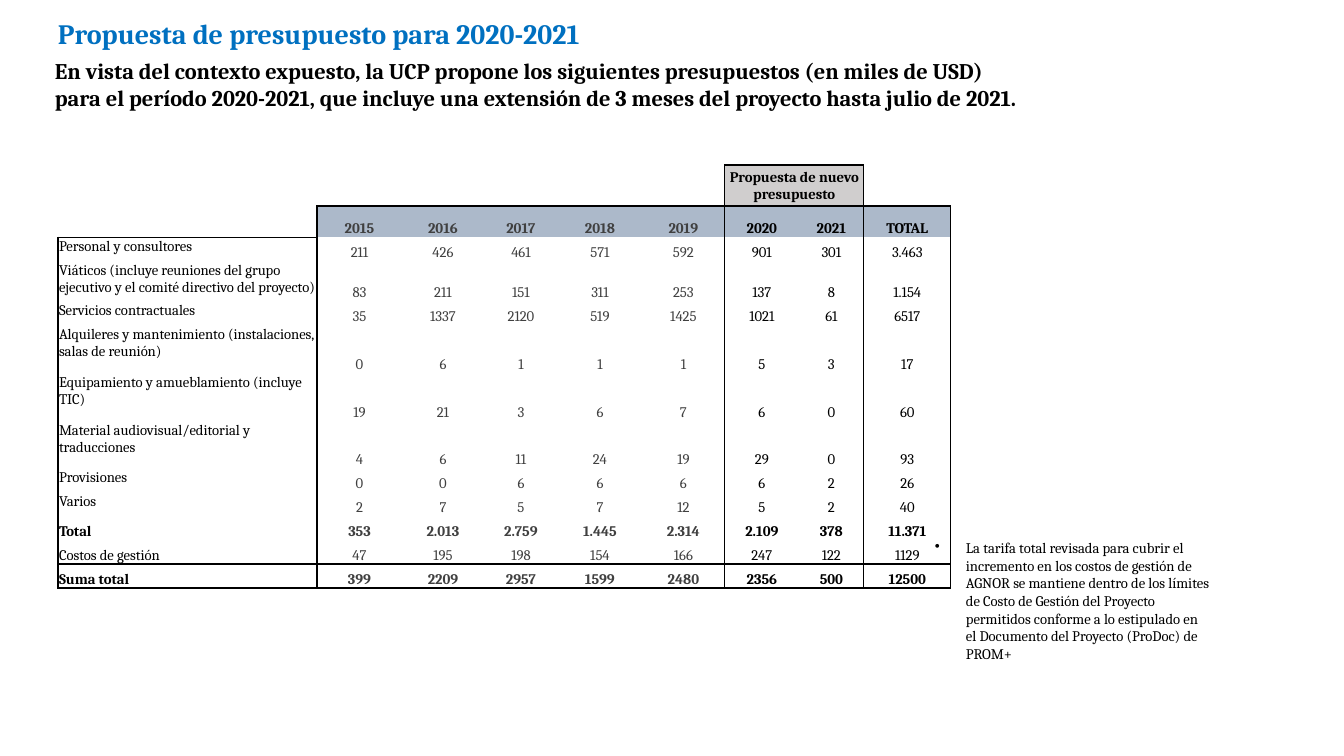
"""Build the slide with the 2020-2021 budget proposal table."""
import dataclasses

import lxml.etree
import pptx
import pptx.dml.color
import pptx.enum.text
import pptx.oxml.ns
import pptx.util

EMU_PER_PX = 914400 / 100.8
ALIGN = pptx.enum.text.PP_ALIGN
ANCHOR = pptx.enum.text.MSO_ANCHOR


@dataclasses.dataclass(frozen=True)
class Theme:
    font: str = "Cambria"
    title: str = "0070C0"
    ink: str = "000000"
    past: str = "404040"
    heading_fill: str = "ACB9CA"
    proposal_fill: str = "D0CECE"
    title_size: float = 20
    subtitle_size: float = 16
    body_size: float = 10.5
    line_width: float = 1


THEME = Theme()

COLUMN_WIDTHS = [259, 85, 82, 74, 84, 83, 74, 65, 87]
ROW_HEIGHTS = [41, 31, 24, 40, 24, 48, 48, 47, 24, 24, 24, 24, 24]
PAST_COLUMNS = range(1, 6)
PROPOSAL_COLUMNS = range(6, 8)
BOLD_ROWS = (0, 1, 10, 12)
TOP_LABEL_ROWS = range(2, 10)
BUDGET = [
    ["", "", "", "", "", "", "Propuesta de nuevo presupuesto", "", ""],
    ["", "2015", "2016", "2017", "2018", "2019", "2020", "2021", "TOTAL"],
    ["Personal y consultores", "211", "426", "461", "571", "592", "901", "301", "3.463"],
    ["Viáticos (incluye reuniones del grupo ejecutivo y el comité directivo del proyecto)",
     "83", "211", "151", "311", "253", "137", "8", "1.154"],
    ["Servicios contractuales", "35", "1337", "2120", "519", "1425", "1021", "61", "6517"],
    ["Alquileres y mantenimiento (instalaciones, salas de reunión)",
     "0", "6", "1", "1", "1", "5", "3", "17"],
    ["Equipamiento y amueblamiento (incluye TIC)", "19", "21", "3", "6", "7", "6", "0", "60"],
    ["Material audiovisual/editorial y traducciones",
     "4", "6", "11", "24", "19", "29", "0", "93"],
    ["Provisiones", "0", "0", "6", "6", "6", "6", "2", "26"],
    ["Varios", "2", "7", "5", "7", "12", "5", "2", "40"],
    ["Total", "353", "2.013", "2.759", "1.445", "2.314", "2.109", "378", "11.371"],
    ["Costos de gestión", "47", "195", "198", "154", "166", "247", "122", "1129"],
    ["Suma total", "399", "2209", "2957", "1599", "2480", "2356", "500", "12500"],
]


def px(length):
    """Turn a length in px into EMU."""
    return pptx.util.Emu(round(length * EMU_PER_PX))


def rgb(value):
    """Turn a hex string into a colour."""
    return pptx.dml.color.RGBColor.from_string(value)


def write_text(frame, *lines, size=THEME.body_size, color=THEME.ink, bold=False, align=ALIGN.LEFT):
    """Fill a text frame with one paragraph per line."""
    frame.word_wrap = True
    for index, line in enumerate(lines):
        paragraph = frame.add_paragraph() if index else frame.paragraphs[0]
        paragraph.alignment = align
        run = paragraph.add_run()
        run.text = line
        run.font.name = THEME.font
        run.font.size = pptx.util.Pt(size)
        run.font.bold = bold
        run.font.color.rgb = rgb(color)


def add_text_box(slide, left, top, width, height, *lines, **text_format):
    """Add a wrapped text box and return its text frame."""
    frame = slide.shapes.add_textbox(px(left), px(top), px(width), px(height)).text_frame
    write_text(frame, *lines, **text_format)
    return frame


def add_bullet(paragraph, indent):
    """Give a paragraph a round bullet with a hanging indent."""
    properties = paragraph._p.get_or_add_pPr()
    properties.set("marL", str(px(indent)))
    properties.set("indent", str(-px(indent)))
    bullet = lxml.etree.SubElement(properties, pptx.oxml.ns.qn("a:buChar"))
    bullet.set("char", "•")


def has_vertical_line(row, edge):
    """Tell whether the column edge is ruled beside this row."""
    first_ruled_row = {0: 2, 1: 1, 6: 0, 8: 0, 9: 1}
    return edge in first_ruled_row and row >= first_ruled_row[edge]


def has_horizontal_line(edge, column):
    """Tell whether the row edge is ruled across this column."""
    return (edge in (12, 13)
            or edge == 0 and column in PROPOSAL_COLUMNS
            or edge == 1 and column > 0
            or edge == 2 and column == 0)


def set_borders(cell, row, column):
    """Rule the sides of a cell that the table grid calls for."""
    sides = {
        "a:lnL": has_vertical_line(row, column),
        "a:lnR": has_vertical_line(row, column + 1),
        "a:lnT": has_horizontal_line(row, column),
        "a:lnB": has_horizontal_line(row + 1, column),
    }
    properties = cell._tc.get_or_add_tcPr()
    qn = pptx.oxml.ns.qn
    for tag, ruled in sides.items():
        line = lxml.etree.SubElement(properties, qn(tag))
        line.set("w", str(pptx.util.Pt(THEME.line_width)))
        if ruled:
            fill = lxml.etree.SubElement(line, qn("a:solidFill"))
            lxml.etree.SubElement(fill, qn("a:srgbClr")).set("val", THEME.ink)
        else:
            lxml.etree.SubElement(line, qn("a:noFill"))


def set_fill(cell, row, column):
    """Colour the heading cells and clear the others."""
    if row == 0 and column in PROPOSAL_COLUMNS:
        cell.fill.solid()
        cell.fill.fore_color.rgb = rgb(THEME.proposal_fill)
    elif row == 1 and column > 0:
        cell.fill.solid()
        cell.fill.fore_color.rgb = rgb(THEME.heading_fill)
    else:
        cell.fill.background()


def format_cell(cell, row, column, text):
    """Set the margins, borders, fill and text of one budget cell."""
    cell.margin_left = cell.margin_right = cell.margin_top = px(1)
    cell.margin_bottom = 0
    set_borders(cell, row, column)
    set_fill(cell, row, column)
    if row == 0:
        cell.vertical_anchor = ANCHOR.MIDDLE
    elif column == 0 and row in TOP_LABEL_ROWS:
        cell.vertical_anchor = ANCHOR.TOP
    else:
        cell.vertical_anchor = ANCHOR.BOTTOM
    if text:
        write_text(cell.text_frame, text, bold=row in BOLD_ROWS,
                   color=THEME.past if column in PAST_COLUMNS else THEME.ink,
                   align=ALIGN.CENTER if column else ALIGN.LEFT)


def add_budget_table(slide, left, top):
    """Add the budget table with its merged proposal heading."""
    table = slide.shapes.add_table(
        len(ROW_HEIGHTS), len(COLUMN_WIDTHS), px(left), px(top),
        px(sum(COLUMN_WIDTHS)), px(sum(ROW_HEIGHTS))).table
    table.first_row = table.horz_banding = False
    for column, width in zip(table.columns, COLUMN_WIDTHS):
        column.width = px(width)
    for row, height in zip(table.rows, ROW_HEIGHTS):
        row.height = px(height)
    table.cell(0, PROPOSAL_COLUMNS[0]).merge(table.cell(0, PROPOSAL_COLUMNS[-1]))
    for row, values in enumerate(BUDGET):
        for column, text in enumerate(values):
            format_cell(table.cell(row, column), row, column, text)


def main():
    """Build and save the presentation."""
    presentation = pptx.Presentation()
    presentation.slide_width, presentation.slide_height = px(1344), px(756)
    slide = presentation.slides.add_slide(presentation.slide_layouts[6])
    add_text_box(slide, -52, 12, 742, 58, "Propuesta de presupuesto para 2020-2021",
                 size=THEME.title_size, color=THEME.title, bold=True, align=ALIGN.CENTER)
    add_text_box(
        slide, 45, 52, 1261, 46,
        "En vista del contexto expuesto, la UCP propone los siguientes presupuestos (en miles de USD)",
        "para el período 2020-2021, que incluye una extensión de 3 meses del proyecto hasta julio de 2021.",
        size=THEME.subtitle_size, bold=True, align=ALIGN.JUSTIFY)
    note = add_text_box(
        slide, 925, 461, 296, 295,
        "La tarifa total revisada para cubrir el incremento en los costos de gestión de "
        "AGNOR se mantiene dentro de los límites de Costo de Gestión del Proyecto permitidos "
        "conforme a lo estipulado en el Documento del Proyecto (ProDoc) de PROM+")
    note.margin_top = px(78)
    add_bullet(note.paragraphs[0], 31)
    add_budget_table(slide, 58, 165)
    presentation.save("out.pptx")


if __name__ == "__main__":
    main()
